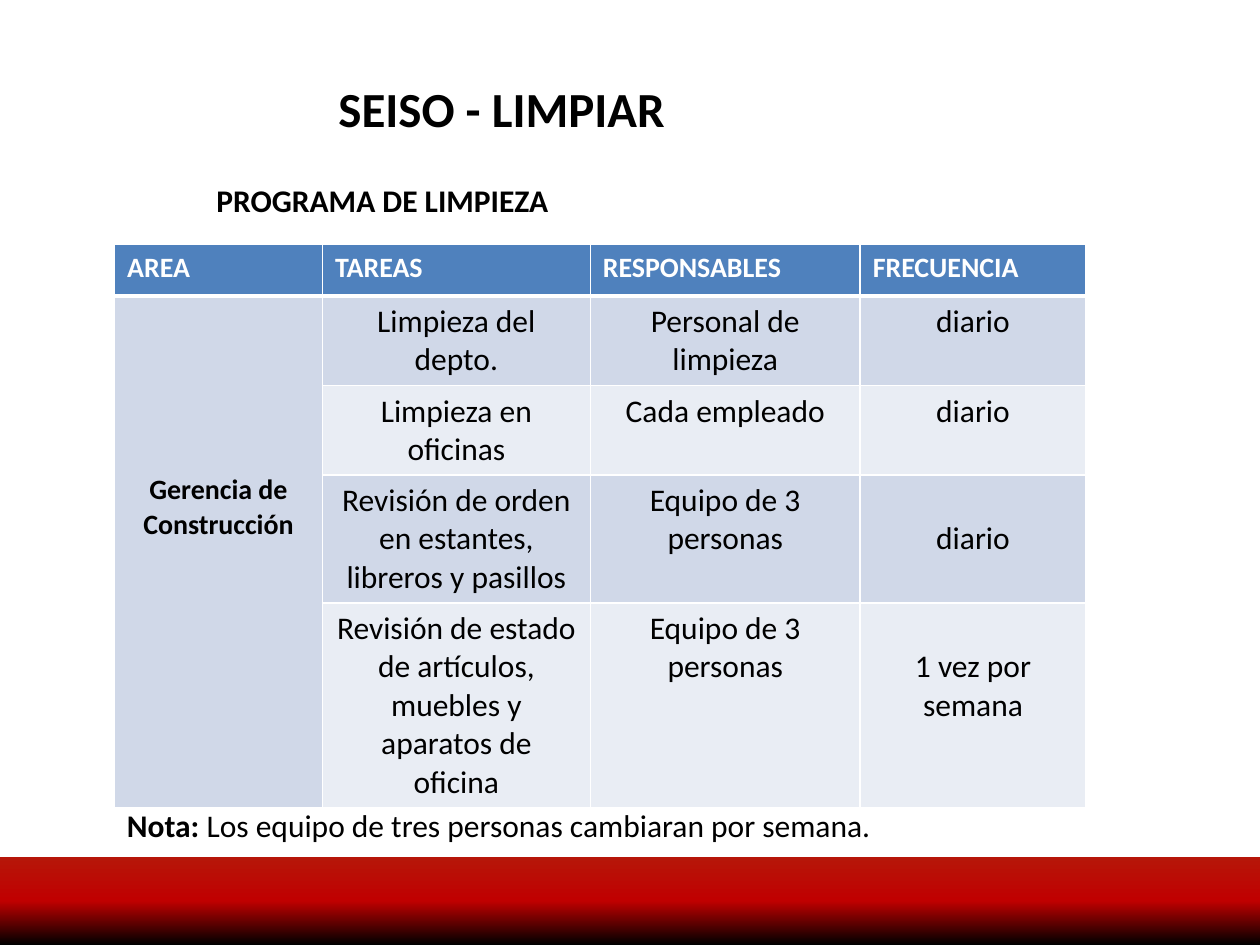
import pptx
import pptx.dml.color
import pptx.enum.shapes
import pptx.enum.text
import pptx.oxml
import pptx.oxml.ns
import pptx.util

Cm = pptx.util.Cm
Pt = pptx.util.Pt
ALIGN = pptx.enum.text.PP_ALIGN
ANCHOR = pptx.enum.text.MSO_ANCHOR

HEX = {
    "ink": "000000", "white": "FFFFFF", "head": "4F81BD",
    "odd": "D0D8E8", "even": "E9EDF4",
    "brick": "B61609", "red": "C00000",
}
NS = pptx.oxml.ns.nsdecls("a")
HEADS = ["AREA", "TAREAS", "RESPONSABLES", "FRECUENCIA"]
AREA = "Gerencia de Construcción"
TASKS = [
    ("Limpieza del depto.", "Personal de limpieza", "diario"),
    ("Limpieza en oficinas", "Cada empleado", "diario"),
    ("Revisión de orden en estantes, libreros y pasillos",
     "Equipo de 3 personas", "diario"),
    ("Revisión de estado de artículos, muebles y aparatos de oficina",
     "Equipo de 3 personas", "1 vez por semana"),
]
COLS = [4.19, 5.4, 5.44, 4.55]
ROWS = [1.04, 1.8, 1.8, 2.58, 4.13]


def color(name):
    return pptx.dml.color.RGBColor.from_string(HEX[name])


def write(frame, text, size=18, bold=False, ink="ink", align=ALIGN.LEFT):
    """Add one run to the frame's first paragraph."""
    frame.word_wrap = True
    para = frame.paragraphs[0]
    para.alignment = align
    run = para.add_run()
    run.text = text
    run.font.name = "Calibri"
    run.font.size = Pt(size)
    run.font.bold = bold
    run.font.color.rgb = color(ink)


def label(slide, box, anchor=ANCHOR.TOP):
    """Add an empty text box and return its frame."""
    frame = slide.shapes.add_textbox(*map(Cm, box)).text_frame
    frame.vertical_anchor = anchor
    return frame


def band(slide, box):
    """Footer bar with a vertical three-stop gradient."""
    bar = slide.shapes.add_shape(
        pptx.enum.shapes.MSO_SHAPE.RECTANGLE, *map(Cm, box))
    bar.shadow.inherit = False
    bar.line.fill.background()
    bar.fill.gradient()
    bar.fill.gradient_angle = 270
    grad = bar.fill.gradient_stops[0]._gs.getparent()
    for stop in list(grad):
        grad.remove(stop)
    for pos, name in ((0, "brick"), (50, "red"), (100, "ink")):
        grad.append(pptx.oxml.parse_xml(
            f'<a:gs {NS} pos="{pos * 1000}">'
            f'<a:srgbClr val="{HEX[name]}"/></a:gs>'))


def style(cell, row, fill):
    """Fill a cell and rule it in white, thicker below the header."""
    cell.fill.solid()
    cell.fill.fore_color.rgb = color(fill)
    thick = {"lnB": row == 0, "lnT": row == 1}
    for i, side in enumerate(("lnL", "lnR", "lnT", "lnB")):
        width = Pt(3 if thick.get(side) else 1)
        cell._tc.get_or_add_tcPr().insert(i, pptx.oxml.parse_xml(
            f'<a:{side} {NS} w="{width}"><a:solidFill>'
            f'<a:srgbClr val="{HEX["white"]}"/></a:solidFill></a:{side}>'))


def plan(slide, left, top):
    """Cleaning table: header, merged area cell and task rows."""
    grid = slide.shapes.add_table(
        len(ROWS), len(COLS), Cm(left), Cm(top),
        Cm(sum(COLS)), Cm(sum(ROWS))).table
    for col, width in zip(grid.columns, COLS):
        col.width = Cm(width)
    for row, height in zip(grid.rows, ROWS):
        row.height = Cm(height)
    for r in range(len(ROWS)):
        fill = "head" if r == 0 else "odd" if r % 2 else "even"
        for c in range(len(COLS)):
            style(grid.cell(r, c), r, fill if c else "odd" if r else "head")

    # Header
    for c, text in enumerate(HEADS):
        write(grid.cell(0, c).text_frame, text, size=16, bold=True,
              ink="white")

    # Area
    area = grid.cell(1, 0)
    area.merge(grid.cell(len(TASKS), 0))
    area.margin_top = Cm(3.57)
    write(area.text_frame, AREA, size=16, bold=True, align=ALIGN.CENTER)

    # Tasks; the last two frequencies sit one line lower
    for r, task in enumerate(TASKS, 1):
        for c, text in enumerate(task, 1):
            write(grid.cell(r, c).text_frame, text, align=ALIGN.CENTER)
        if r > 2:
            grid.cell(r, 3).margin_top = Cm(0.9)


def page(slide, left, wide, high):
    """Place all parts of the slide."""
    band(slide, (0, high - 1.78, wide, 1.78))
    plan(slide, left, 4.93)
    write(label(slide, (left, 3.53, 10.8, 1.02)), "PROGRAMA DE LIMPIEZA",
          bold=True, align=ALIGN.CENTER)
    write(label(slide, (left, 0.86, 15.6, 2.64), ANCHOR.MIDDLE),
          "SEISO - LIMPIAR", size=28, bold=True, align=ALIGN.CENTER)
    note = label(slide, (left, 16.13, 19.81, 1.02))
    write(note, "Nota: ", bold=True)
    write(note, "Los equipo de tres personas cambiaran por semana.")


def main():
    deck = pptx.Presentation()
    deck.slide_width, deck.slide_height = Cm(25.4), Cm(19.05)
    page(deck.slides.add_slide(deck.slide_layouts[6]), 2.31, 25.4, 19.05)
    deck.save("out.pptx")


if __name__ == "__main__":
    main()
